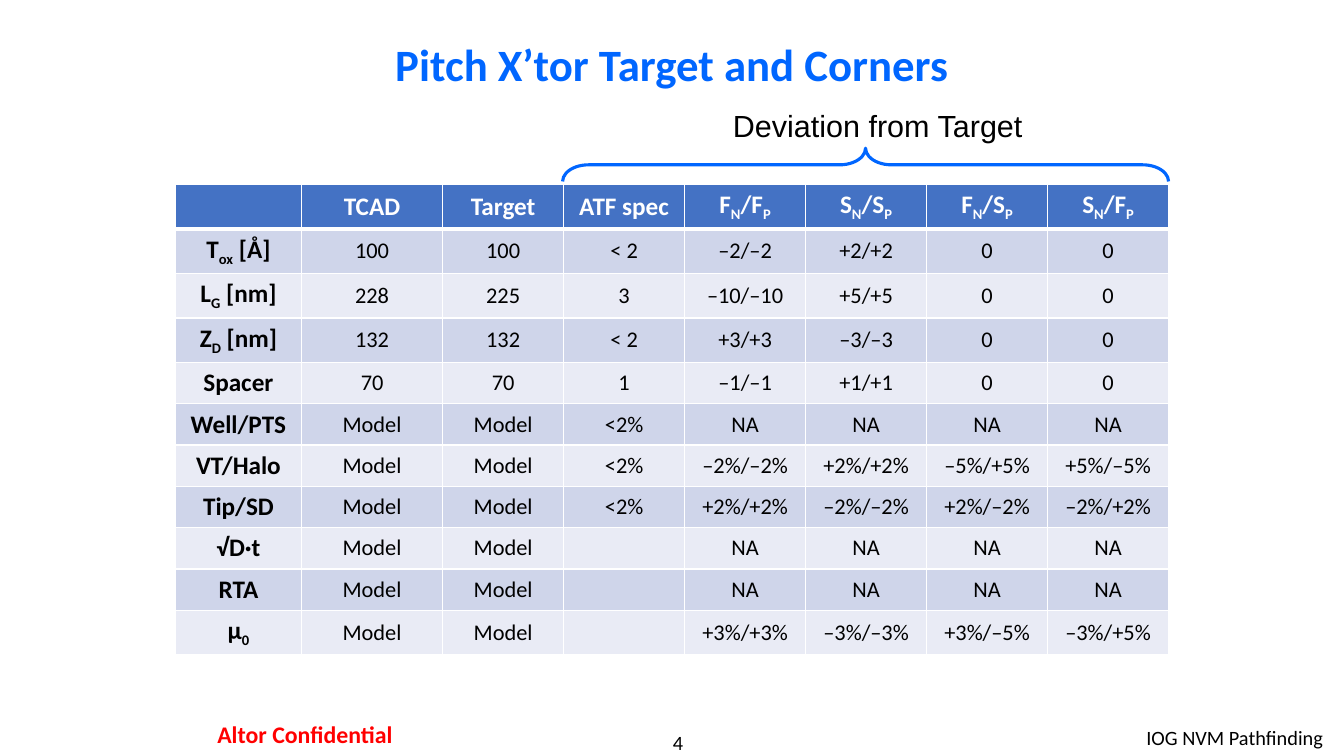
from lxml.etree import SubElement
from pptx import Presentation
from pptx.dml.color import RGBColor
from pptx.enum.shapes import MSO_SHAPE
from pptx.enum.text import MSO_ANCHOR, PP_ALIGN
from pptx.oxml.ns import qn
from pptx.util import Inches, Pt

BLACK = RGBColor(0x00, 0x00, 0x00)
WHITE = RGBColor(0xFF, 0xFF, 0xFF)
RED = RGBColor(0xFF, 0x00, 0x00)
BLUE = RGBColor(0x00, 0x66, 0xFF)
HEAD = RGBColor(0x44, 0x72, 0xC4)
BANDS = [RGBColor(0xE9, 0xEB, 0xF5), RGBColor(0xCF, 0xD5, 0xEA)]


def write(frame, text, size=16, color=BLACK, bold=False, font="Calibri",
          align=PP_ALIGN.CENTER):
    """Fill a text frame; parts between underscores become subscripts."""
    para = frame.paragraphs[0]
    para.alignment = align
    for i, part in enumerate(text.split("_")):
        if not part:
            continue
        run = para.add_run()
        run.text = part
        run.font.size = Pt(size)
        run.font.name = font
        run.font.bold = bold
        run.font.color.rgb = color
        if i % 2:
            run.font._element.set("baseline", "-25000")


def add_box(left, top, width, height, pad=(0.1, 0.05), wrap=True):
    box = slide.shapes.add_textbox(Inches(left), Inches(top),
                                   Inches(width), Inches(height))
    frame = box.text_frame
    frame.word_wrap = wrap
    frame.margin_left = frame.margin_right = Inches(pad[0])
    frame.margin_top = frame.margin_bottom = Inches(pad[1])
    return frame


deck = Presentation()
deck.slide_width = Inches(13.33)
deck.slide_height = Inches(7.5)
slide = deck.slides.add_slide(deck.slide_layouts[6])

# Footer
write(add_box(5.56, 7.24, 2.33, 0.24, pad=(0, 0)), "4", size=14.5)
write(add_box(8.83, 7.15, 4.39, 0.35), "IOG NVM Pathfinding", size=14.5,
      align=PP_ALIGN.RIGHT)
write(add_box(1.55, 7.08, 2.95, 0.41, pad=(0.12, 0.06)), "Altor Confidential",
      size=17, color=RED, bold=True)

# Title
title = add_box(1, 0.17, 11.33, 0.92)
title.vertical_anchor = MSO_ANCHOR.MIDDLE
write(title, "Pitch X’tor Target and Corners", size=32, color=BLUE, bold=True)

# Table of targets and corners
rows = [
    ["", "TCAD", "Target", "ATF spec",
     "F_N_/F_P_", "S_N_/S_P_", "F_N_/S_P_", "S_N_/F_P_"],
    ["T_ox_ [Å]", "100", "100", "< 2", "–2/–2", "+2/+2", "0", "0"],
    ["L_G_ [nm]", "228", "225", "3", "–10/–10", "+5/+5", "0", "0"],
    ["Z_D_ [nm]", "132", "132", "< 2", "+3/+3", "–3/–3", "0", "0"],
    ["Spacer", "70", "70", "1", "–1/–1", "+1/+1", "0", "0"],
    ["Well/PTS", "Model", "Model", "<2%", "NA", "NA", "NA", "NA"],
    ["VT/Halo", "Model", "Model", "<2%",
     "–2%/–2%", "+2%/+2%", "–5%/+5%", "+5%/–5%"],
    ["Tip/SD", "Model", "Model", "<2%",
     "+2%/+2%", "–2%/–2%", "+2%/–2%", "–2%/+2%"],
    ["√D·t", "Model", "Model", "", "NA", "NA", "NA", "NA"],
    ["RTA", "Model", "Model", "", "NA", "NA", "NA", "NA"],
    ["μ_0_", "Model", "Model", "",
     "+3%/+3%", "–3%/–3%", "+3%/–5%", "–3%/+5%"],
]
widths = [1.25, 1.4] + [1.2] * 6
high = 0.41
table = slide.shapes.add_table(
    len(rows), len(widths), Inches(1.74), Inches(1.83),
    Inches(sum(widths)), Inches(high * len(rows))).table
table.horz_banding = False
for col, width in zip(table.columns, widths):
    col.width = Inches(width)

for r, row in enumerate(rows):
    table.rows[r].height = Inches(high)
    for c, text in enumerate(row):
        cell = table.cell(r, c)
        cell.vertical_anchor = MSO_ANCHOR.MIDDLE
        label = r == 0 or c == 0
        write(cell.text_frame, text, size=18 if label else 16, bold=label,
              color=BLACK if r else WHITE)
        # White borders, thick below the header
        props = cell._tc.get_or_add_tcPr()
        for side in ("L", "R", "T", "B"):
            thick = (r, side) in [(0, "B"), (1, "T")]
            line = SubElement(props, qn("a:ln" + side),
                              w=str(Pt(3 if thick else 1)))
            fill = SubElement(line, qn("a:solidFill"))
            SubElement(fill, qn("a:srgbClr"), val=str(WHITE))
        cell.fill.solid()
        cell.fill.fore_color.rgb = BANDS[r % 2] if r else HEAD

# Brace over the deviation columns
brace = slide.shapes.add_shape(MSO_SHAPE.RIGHT_BRACE, Inches(8.42),
                               Inches(-1.37), Inches(0.33), Inches(6.01))
brace.rotation = 270
brace.adjustments[0] = 0.778
brace.adjustments[1] = 0.5
brace.shadow.inherit = False
brace.fill.background()
brace.line.color.rgb = BLUE
brace.line.width = Pt(2.25)
write(add_box(7.17, 1.01, 3.1, 0.47, wrap=False), "Deviation from Target",
      size=21.8, font="Arial", align=PP_ALIGN.LEFT)

deck.save("out.pptx")
